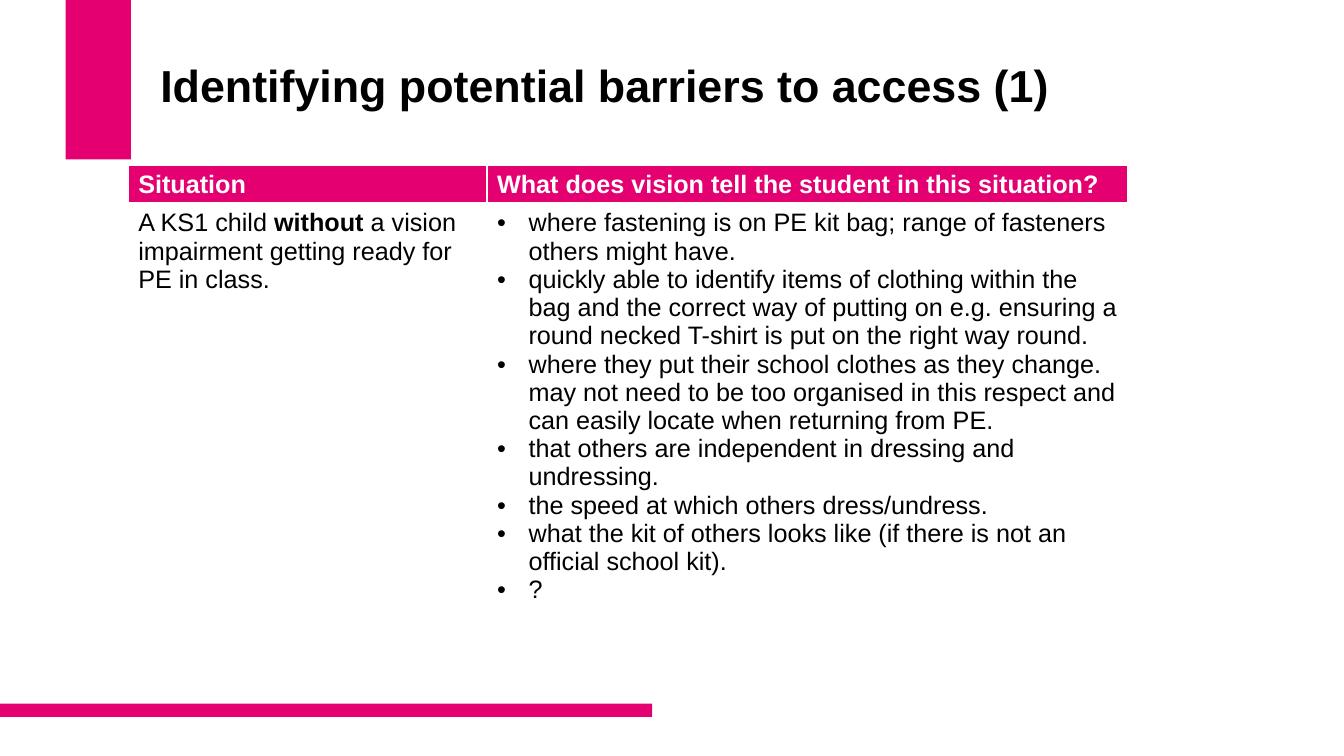
from dataclasses import dataclass

import lxml.etree
import pptx
import pptx.dml.color
import pptx.enum.shapes
import pptx.enum.text
import pptx.oxml.ns
import pptx.util

Pt = pptx.util.Pt
RGBColor = pptx.dml.color.RGBColor
qn = pptx.oxml.ns.qn

PINK = RGBColor(0xE5, 0x00, 0x71)
WHITE = RGBColor(0xFF, 0xFF, 0xFF)
BLACK = RGBColor(0x00, 0x00, 0x00)
FONT = "Arial"
TABLE_SIZE = 18
BULLET_INDENT = Pt(22.5)


@dataclass
class Bar:
    left: float
    top: float
    width: float
    height: float


@dataclass
class Span:
    text: str
    bold: bool = False


@dataclass
class CellContent:
    paragraphs: list[list[Span]]
    color: RGBColor = BLACK
    fill: RGBColor = WHITE
    bulleted: bool = False
    bottom_border: float = 1


BARS = [Bar(46.8, 0, 46.8, 113.8), Bar(0, 502.6, 465.8, 9.4)]

VISION_POINTS = [
    "where fastening is on PE kit bag; range of fasteners others might have.",
    "quickly able to identify items of clothing within the bag and the correct way of "
    "putting on e.g. ensuring a round necked T-shirt is put on the right way round.",
    "where they put their school clothes as they change. may not need to be too organised "
    "in this respect and can easily locate when returning from PE.",
    "that others are independent in dressing and undressing.",
    "the speed at which others dress/undress.",
    "what the kit of others looks like (if there is not an official school kit).",
    "?",
]

HEADINGS = ["Situation", "What does vision tell the student in this situation?"]

SITUATION = [
    Span("A KS1 child "),
    Span("without ", bold=True),
    Span("a vision impairment getting ready for PE in class."),
]

ROWS = [
    [CellContent([[Span(heading, bold=True)]], WHITE, PINK, bottom_border=3) for heading in HEADINGS],
    [
        CellContent([SITUATION]),
        CellContent([[Span(point)] for point in VISION_POINTS], bulleted=True),
    ],
]
COLUMN_WIDTHS = [256.3, 457.6]
ROW_HEIGHTS = [26.6, 310.3]


def add_span(paragraph, span: Span, size: float, color: RGBColor) -> None:
    run = paragraph.add_run()
    run.text = span.text
    run.font.name = FONT
    run.font.size = Pt(size)
    run.font.bold = span.bold
    run.font.color.rgb = color


def add_bar(slide, bar: Bar) -> None:
    shape = slide.shapes.add_shape(
        pptx.enum.shapes.MSO_SHAPE.RECTANGLE,
        Pt(bar.left), Pt(bar.top), Pt(bar.width), Pt(bar.height),
    )
    shape.shadow.inherit = False
    shape.fill.solid()
    shape.fill.fore_color.rgb = PINK
    shape.line.fill.background()


def format_title(slide) -> None:
    title = slide.shapes.title
    title.left, title.top = Pt(107.3), Pt(28.8)
    title.width, title.height = Pt(691.2), Pt(104.4)
    frame = title.text_frame
    frame.word_wrap = True
    frame.auto_size = pptx.enum.text.MSO_AUTO_SIZE.NONE
    frame.vertical_anchor = pptx.enum.text.MSO_ANCHOR.MIDDLE
    frame.margin_bottom = Pt(40)
    paragraph = frame.paragraphs[0]
    paragraph.alignment = pptx.enum.text.PP_ALIGN.LEFT
    paragraph.line_spacing = 0.9
    add_span(paragraph, Span("Identifying potential barriers to access (1)", bold=True), 32, BLACK)


def add_bullet(paragraph) -> None:
    properties = paragraph._p.get_or_add_pPr()
    properties.set("marL", str(BULLET_INDENT))
    properties.set("indent", str(-BULLET_INDENT))
    lxml.etree.SubElement(properties, qn("a:buFont"), typeface=FONT)
    lxml.etree.SubElement(properties, qn("a:buChar"), char="•")


def add_borders(cell, bottom_width: float) -> None:
    properties = cell._tc.get_or_add_tcPr()
    widths = {"lnL": 1, "lnR": 1, "lnT": 1, "lnB": bottom_width}
    for side, width in widths.items():
        line = lxml.etree.SubElement(properties, qn(f"a:{side}"), w=str(Pt(width)))
        fill = lxml.etree.SubElement(line, qn("a:solidFill"))
        lxml.etree.SubElement(fill, qn("a:srgbClr"), val=str(WHITE))


def fill_cell(cell, content: CellContent) -> None:
    add_borders(cell, content.bottom_border)
    cell.fill.solid()
    cell.fill.fore_color.rgb = content.fill
    frame = cell.text_frame
    for index, spans in enumerate(content.paragraphs):
        paragraph = frame.add_paragraph() if index else frame.paragraphs[0]
        if content.bulleted:
            add_bullet(paragraph)
        for span in spans:
            add_span(paragraph, span, TABLE_SIZE, content.color)


def add_situation_table(slide) -> None:
    table = slide.shapes.add_table(
        len(ROWS), len(COLUMN_WIDTHS), Pt(91.6), Pt(118.4),
        Pt(sum(COLUMN_WIDTHS)), Pt(sum(ROW_HEIGHTS)),
    ).table
    table.horz_banding = False
    for column, width in zip(table.columns, COLUMN_WIDTHS):
        column.width = Pt(width)
    for row, height, contents in zip(table.rows, ROW_HEIGHTS, ROWS):
        row.height = Pt(height)
        for cell, content in zip(row.cells, contents):
            fill_cell(cell, content)


def main() -> None:
    presentation = pptx.Presentation()
    presentation.slide_width = Pt(960)
    presentation.slide_height = Pt(540)
    slide = presentation.slides.add_slide(presentation.slide_layouts[5])
    for bar in BARS:
        add_bar(slide, bar)
    format_title(slide)
    add_situation_table(slide)
    presentation.save("out.pptx")


if __name__ == "__main__":
    main()
